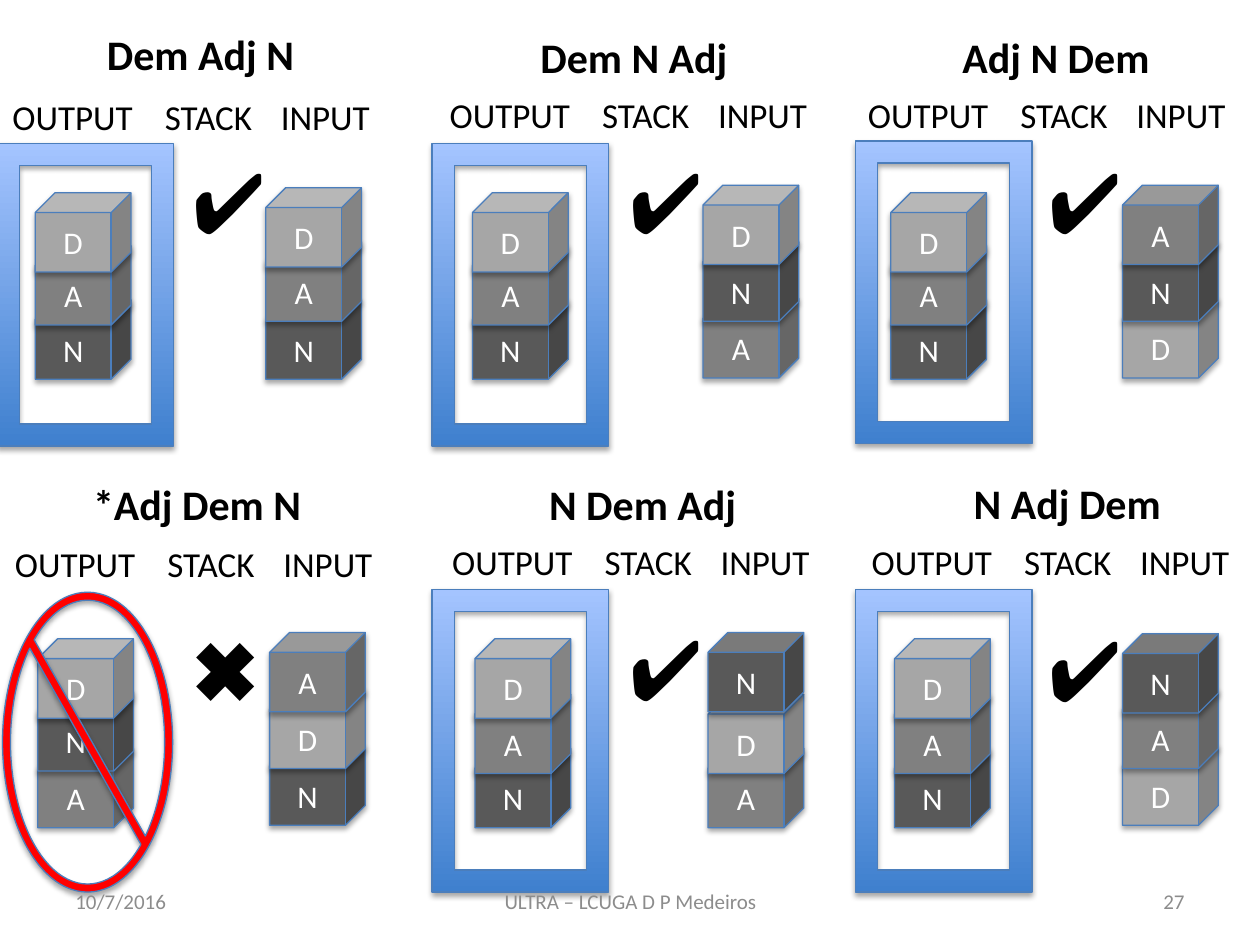
from dataclasses import dataclass

from lxml.etree import SubElement
from pptx import Presentation
from pptx.dml.color import RGBColor
from pptx.enum.shapes import MSO_SHAPE
from pptx.enum.text import MSO_ANCHOR, PP_ALIGN
from pptx.oxml.ns import qn
from pptx.util import Inches, Pt

BLACK, WHITE, GRAY = "000000", "FFFFFF", "8C8C8C"
OUTLINE, RED = "4B7EBC", "FF0000"
FRAME_BOTTOM, FRAME_TOP = "3F80CE", "A4C4FF"
BLOCK_COLORS = {"D": "A6A6A6", "A": "808080", "N": "595959"}
HEADINGS = (("OUTPUT", 0, 1.21), ("STACK", 1.21, 0.92), ("INPUT", 2.13, 1.08))


@dataclass
class Panel:
    """One word order; stacks are read from top to bottom."""
    title: str
    title_at: tuple
    headings_at: tuple
    output: str
    output_tops: tuple
    input: str
    input_left: float
    input_tops: tuple
    mark_at: tuple
    frame_at: tuple
    allowed: bool = True


UPPER_OUTPUT = (1.53, 1.95, 2.38)
LOWER_OUTPUT = (5.07, 5.51, 5.94)
UPPER_INPUT = (1.47, 1.92, 2.37)

PANELS = (
    Panel("Dem Adj N", (0.75, 0.18), (0, 0.71), "DAN", UPPER_OUTPUT,
          "DAN", 2.11, (1.49, 1.92, 2.38), (1.43, 1.14), (-0.02, 1.14)),
    Panel("Dem N Adj", (4.19, 0.2), (3.47, 0.69), "DAN", UPPER_OUTPUT,
          "DNA", 5.58, UPPER_INPUT, (4.9, 1.14), (3.43, 1.14)),
    Panel("Adj N Dem", (7.54, 0.2), (6.79, 0.69), "DAN", UPPER_OUTPUT,
          "AND", 8.91, UPPER_INPUT, (8.22, 1.14), (6.79, 1.12)),
    Panel("*Adj Dem N", (0.64, 3.75), (0.02, 4.26), "DNA", (5.07, 5.49, 5.94),
          "ADN", 2.14, (5.02, 5.47, 5.92), (1.43, 4.85), (0.02, 4.7), False),
    Panel("N Dem Adj", (4.26, 3.75), (3.49, 4.24), "DAN", LOWER_OUTPUT,
          "NDA", 5.62, (5.02, 5.51, 5.94), (4.9, 4.84), (3.43, 4.68)),
    Panel("N Adj Dem", (7.63, 3.74), (6.82, 4.24), "DAN", LOWER_OUTPUT,
          "NAD", 8.91, (5.03, 5.47, 5.92), (8.22, 4.85), (6.79, 4.68)),
)


def rgb(value):
    return RGBColor.from_string(value)


def format_text(shape, text, size, color, font="Calibri", bold=False,
                align=PP_ALIGN.LEFT):
    paragraph = shape.text_frame.paragraphs[0]
    paragraph.text = text
    paragraph.alignment = align
    paragraph.font.name = font
    paragraph.font.size = Pt(size)
    paragraph.font.bold = bold
    paragraph.font.color.rgb = rgb(color)


def add_text(slide, box, text, size, color=BLACK, anchor=MSO_ANCHOR.TOP,
             **style):
    shape = slide.shapes.add_textbox(*map(Inches, box))
    shape.text_frame.word_wrap = True
    shape.text_frame.vertical_anchor = anchor
    format_text(shape, text, size, color, **style)


def add_shadow(shape):
    """Soft shadow falling straight down."""
    shape.shadow.inherit = False
    effects = shape._element.spPr.find(qn("a:effectLst"))
    shadow = SubElement(effects, qn("a:outerShdw"), blurRad=str(Pt(3.1)),
                        dist=str(Pt(1.8)), dir="5400000", rotWithShape="0")
    color = SubElement(shadow, qn("a:srgbClr"), val=BLACK)
    SubElement(color, qn("a:alpha"), val="35000")


def add_outlined(slide, kind, box):
    shape = slide.shapes.add_shape(kind, *map(Inches, box))
    shape.line.color.rgb = rgb(OUTLINE)
    shape.line.width = Pt(0.75)
    add_shadow(shape)
    return shape


def add_stack(slide, letters, left, tops):
    # Lowest block first, so that each one covers the lid of the one below
    for letter, top in reversed(list(zip(letters, tops))):
        cube = add_outlined(slide, MSO_SHAPE.CUBE, (left, top, 0.76, 0.63))
        cube.fill.solid()
        cube.fill.fore_color.rgb = rgb(BLOCK_COLORS[letter])
        format_text(cube, letter, 18, WHITE, align=PP_ALIGN.CENTER)


def add_frame(slide, position):
    frame = add_outlined(slide, MSO_SHAPE.FRAME, (*position, 1.4, 2.4))
    frame.fill.gradient()
    frame.fill.gradient_angle = 90
    for stop, color in zip(frame.fill.gradient_stops, (FRAME_BOTTOM, FRAME_TOP)):
        stop.color.rgb = rgb(color)


def add_ban(slide, position):
    ban = add_outlined(slide, MSO_SHAPE.NO_SYMBOL, (*position, 1.35, 2.38))
    ban.adjustments[0] = 0.047
    ban.fill.solid()
    ban.fill.fore_color.rgb = rgb(RED)


def add_panel(slide, panel):
    # Title and column headings
    add_text(slide, (*panel.title_at, 1.9, 0.5), panel.title, 24, bold=True)
    left, top = panel.headings_at
    for heading, offset, width in HEADINGS:
        add_text(slide, (left + offset, top, width, 0.44), heading, 20)

    # Output stack with its verdict
    add_stack(slide, panel.output, left + 0.28, panel.output_tops)
    add_border = add_frame if panel.allowed else add_ban
    add_border(slide, panel.frame_at)
    add_text(slide, (*panel.mark_at, 1.44, 0.91),
             "✔" if panel.allowed else "✖", 48, font="Arial")

    # Input stack
    add_stack(slide, panel.input, panel.input_left, panel.input_tops)


def add_footer(slide):
    for left, width, text, align in (
            (0.5, 2.33, "10/7/2016", PP_ALIGN.LEFT),
            (3.42, 3.17, "ULTRA – LCUGA D P Medeiros", PP_ALIGN.CENTER),
            (7.17, 2.33, "27", PP_ALIGN.RIGHT)):
        add_text(slide, (left, 6.95, width, 0.4), text, 12, GRAY,
                 MSO_ANCHOR.MIDDLE, align=align)


def main():
    presentation = Presentation()
    presentation.slide_width = Inches(10)
    presentation.slide_height = Inches(7.5)
    slide = presentation.slides.add_slide(presentation.slide_layouts[6])
    for panel in PANELS:
        add_panel(slide, panel)
    add_footer(slide)
    presentation.save("out.pptx")


if __name__ == "__main__":
    main()
